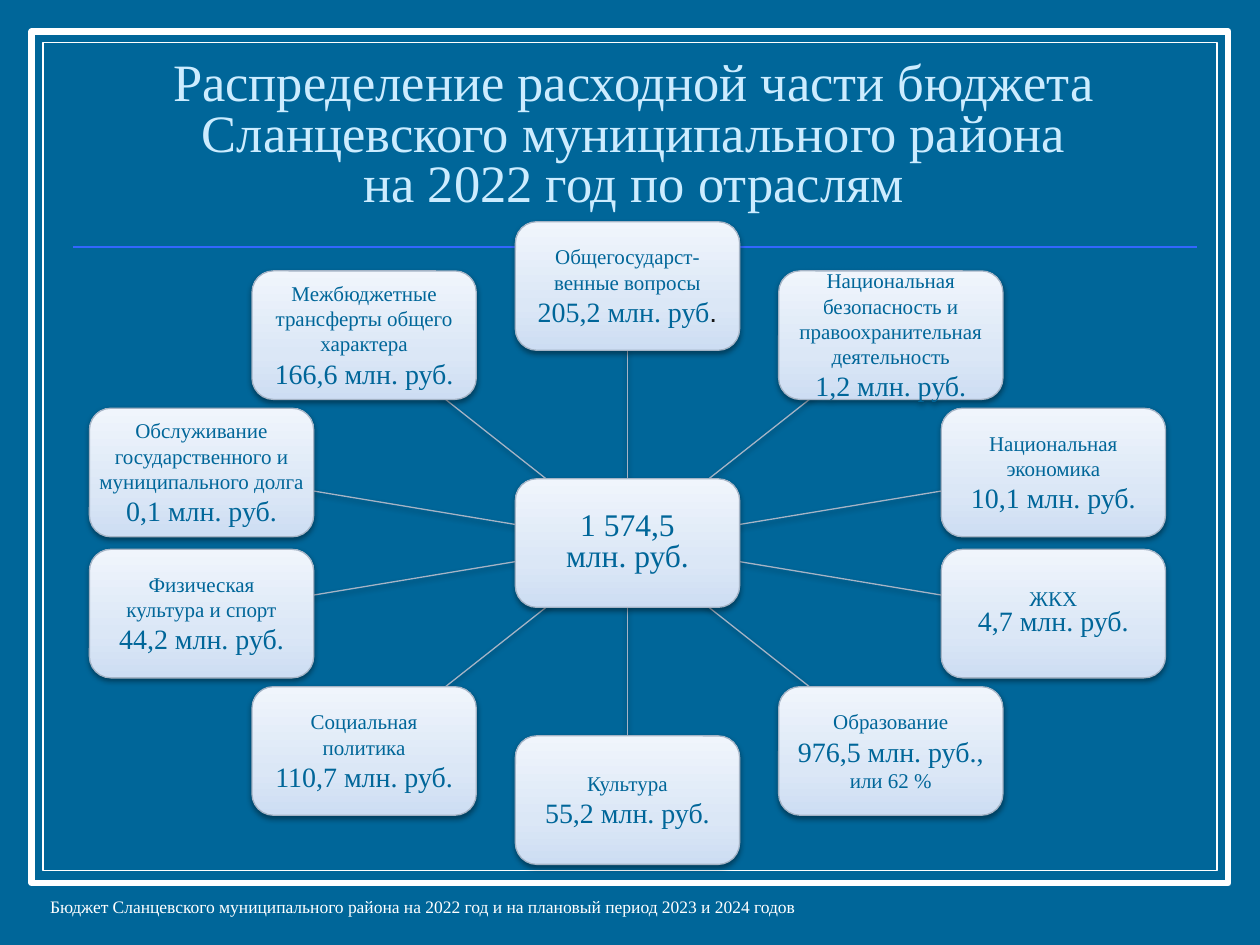
from pptx import Presentation
from pptx.dml.color import RGBColor
from pptx.enum.shapes import MSO_CONNECTOR as Connector, MSO_SHAPE as Shape
from pptx.enum.text import MSO_ANCHOR as Anchor, MSO_AUTO_SIZE as AutoSize, PP_ALIGN as Align
from pptx.oxml import parse_xml
from pptx.util import Inches, Pt

COLORS = {
    "blue": "006699", "white": "FFFFFF", "title": "CCECFF", "rule": "3366FF",
    "edge": "A5B4C6", "dark": "161616", "shadow": "000000",
}
CARD_GRADIENT = ((0, "CDDDF3"), (35, "DBE7F6"), (100, "F0F5FC"))
FONT = "Times New Roman"
NAMESPACE = 'xmlns:a="http://schemas.openxmlformats.org/drawingml/2006/main"'

COLUMNS, ROWS = 100, 75
CARD_SIZE = (17.8, 10.2)
HUB = (49.8, 43.1)
RING = [
    (0, -20.4), (20.9, -16.5), (33.8, -5.6), (33.8, 5.6), (20.9, 16.5),
    (0, 20.4), (-20.9, 16.5), (-33.8, 5.6), (-33.8, -5.6), (-20.9, -16.5),
]
SECTORS = [
    (("Общегосударст-", 12), ("венные вопросы", 12), ("205,2 млн. руб", 16)),
    (("Национальная безопасность и правоохранительная деятельность", 12),
     ("1,2 млн. руб.", 16)),
    (("Национальная", 12), ("экономика", 12), ("10,1 млн. руб.", 16)),
    (("ЖКХ", 12), ("4,7 млн. руб.", 16)),
    (("Образование", 12), ("976,5 млн. руб.,", 16), ("или 62 %", 12)),
    (("Культура", 12), ("55,2 млн. руб.", 16)),
    (("Социальная", 12), ("политика", 12), ("110,7 млн. руб.", 16)),
    (("Физическая\vкультура и спорт", 12), ("44,2 млн. руб.", 16)),
    (("Обслуживание государственного и муниципального долга", 12),
     ("0,1 млн. руб.", 16)),
    (("Межбюджетные трансферты общего характера", 12), ("166,6 млн. руб.", 16)),
]
TIGHT_SECTOR = 3


class Deck:
    def __init__(self):
        self.presentation = Presentation()
        self.presentation.slide_width = Inches(10)
        self.presentation.slide_height = Inches(7.5)
        layout = self.presentation.slide_layouts[5]
        self.slide = self.presentation.slides.add_slide(layout)
        self.paint(self.slide.background.fill, "blue")

    def paint(self, fill, color):
        fill.solid()
        fill.fore_color.rgb = RGBColor.from_string(COLORS[color])

    def outline(self, line, color, width):
        self.paint(line.fill, color)
        line.width = Pt(width)

    def place(self, left, top, width, height):
        across = self.presentation.slide_width / COLUMNS
        down = self.presentation.slide_height / ROWS
        return [round(left * across), round(top * down),
                round(width * across), round(height * down)]

    def style(self, font, size, color, name=FONT):
        font.size = Pt(size)
        font.name = name
        font.color.rgb = RGBColor.from_string(COLORS[color])

    def effects(self, shape, shadow):
        content = ""
        if shadow:
            content = (
                '<a:outerShdw blurRad="40000" dist="20000" dir="5400000" rotWithShape="0">'
                f'<a:srgbClr val="{COLORS["shadow"]}"><a:alpha val="38000"/></a:srgbClr>'
                '</a:outerShdw>')
        effect_list = parse_xml(f"<a:effectLst {NAMESPACE}>{content}</a:effectLst>")
        shape._element.spPr.append(effect_list)

    def frame(self, margin, bottom, width):
        box = self.place(margin, margin, COLUMNS - 2 * margin, bottom - margin)
        shape = self.slide.shapes.add_shape(Shape.RECTANGLE, *box)
        shape.shadow.inherit = False
        self.paint(shape.fill, "blue")
        self.outline(shape.line, "white", width)

    def line(self, start, end, color, width, shadow=False):
        points = self.place(*start, *end)
        connector = self.slide.shapes.add_connector(Connector.STRAIGHT, *points)
        self.outline(connector.line, color, width)
        self.effects(connector, shadow)

    def title(self, text, box):
        title = self.slide.shapes.title
        title.left, title.top, title.width, title.height = self.place(*box)
        frame = title.text_frame
        frame.text = text
        frame.word_wrap = True
        frame.auto_size = AutoSize.NONE
        frame.vertical_anchor = Anchor.BOTTOM
        paragraph = frame.paragraphs[0]
        paragraph.alignment = Align.CENTER
        paragraph.line_spacing = 0.8
        self.style(paragraph.font, 30, "title")
        title._element.getparent().append(title._element)

    def footer(self, text, box):
        frame = self.slide.shapes.add_textbox(*self.place(*box)).text_frame
        frame.word_wrap = True
        frame.vertical_anchor = Anchor.BOTTOM
        frame.text = text
        self.style(frame.paragraphs[0].font, 10, "white")

    def card(self, center, lines, spacing=None):
        width, height = CARD_SIZE
        box = self.place(center[0] - width / 2, center[1] - height / 2, width, height)
        shape = self.slide.shapes.add_shape(Shape.ROUNDED_RECTANGLE, *box)
        stops = "".join(
            f'<a:gs pos="{position * 1000}"><a:srgbClr val="{color}"/></a:gs>'
            for position, color in CARD_GRADIENT)
        shape._element.spPr.append(parse_xml(
            f'<a:gradFill {NAMESPACE} rotWithShape="1"><a:gsLst>{stops}</a:gsLst>'
            '<a:lin ang="16200000" scaled="0"/></a:gradFill>'))
        self.outline(shape.line, "edge", 0.75)
        self.effects(shape, True)
        frame = shape.text_frame
        frame.word_wrap = True
        frame.vertical_anchor = Anchor.MIDDLE
        frame.margin_left = frame.margin_right = frame.margin_top = frame.margin_bottom = 0
        frame.text = "\n".join(text for text, size in lines)
        for paragraph, (text, size) in zip(frame.paragraphs, lines):
            paragraph.alignment = Align.CENTER
            paragraph.line_spacing = spacing
            self.style(paragraph.font, size, "blue")
        return frame


def main():
    deck = Deck()
    deck.frame(2.5, 70.1, 3.5)
    deck.frame(3.4, 69.1, 0.75)
    deck.line((5.8, 19.6), (95, 19.6), "rule", 1)
    deck.footer("Бюджет Сланцевского муниципального района на 2022 год "
                "и на плановый период 2023 и 2024 годов", (3, 68.3, 93.9, 5))
    deck.title("Распределение расходной части бюджета Сланцевского "
               "муниципального района\vна 2022 год по отраслям", (5.7, 7.1, 89.2, 10.3))

    for across, down in RING:
        start, end = [(HUB[0] + across * share, HUB[1] + down * share)
                      for share in (0.25, 0.75)]
        deck.line(start, end, "edge", 0.75, shadow=True)
    deck.card(HUB, (("1 574,5", 18), ("млн. руб.", 18)), 0.8)
    frames = [
        deck.card((HUB[0] + across, HUB[1] + down), lines,
                  0.8 if index == TIGHT_SECTOR else None)
        for index, ((across, down), lines) in enumerate(zip(RING, SECTORS))]
    full_stop = frames[0].paragraphs[-1].add_run()
    full_stop.text = "."
    deck.style(full_stop.font, 16, "dark", "Arial")

    deck.presentation.save("out.pptx")


if __name__ == "__main__":
    main()
